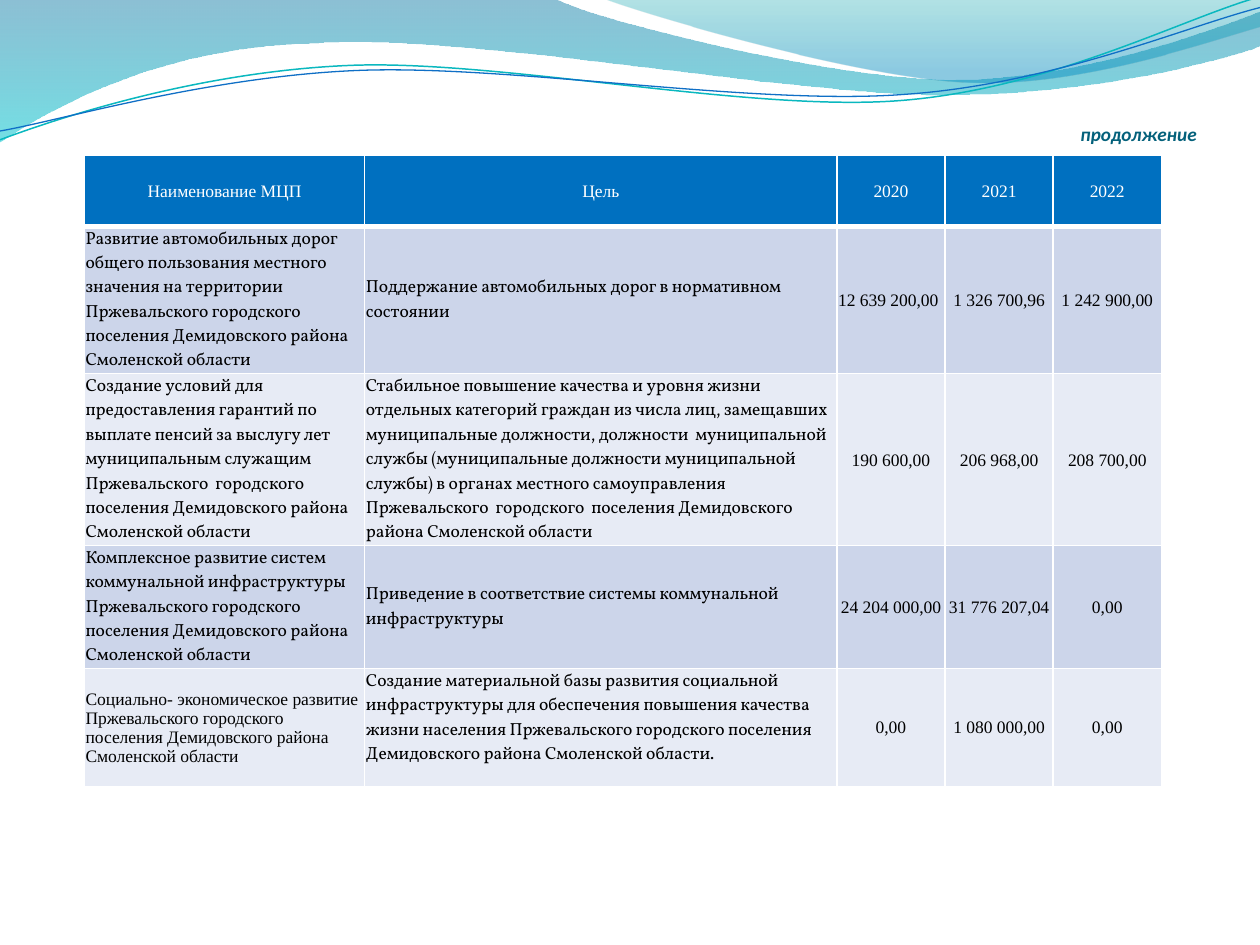
from dataclasses import dataclass
from typing import Optional

from lxml.etree import SubElement
from pptx import Presentation
from pptx.dml.color import RGBColor
from pptx.enum.text import MSO_ANCHOR, PP_ALIGN
from pptx.oxml import parse_xml
from pptx.oxml.ns import nsdecls, qn
from pptx.util import Cm, Pt

SERIF, BOOK = "Times New Roman", "Vollkorn"
HEADER, BAND_DARK, BAND_LIGHT = "0070C0", "CCD5EA", "E7EBF5"
CELL_INSET = Pt(0.75)


@dataclass
class Stop:
    position: float
    color: str
    opacity: int


@dataclass
class Wave:
    """Steps in inches: two numbers are a line, six are a Bezier curve."""
    start: tuple
    steps: list
    stops: tuple = ()
    line: Optional[str] = None
    width: float = 0


@dataclass
class Program:
    name: str
    goal: str
    amounts: tuple
    name_font: str = BOOK
    first_align: PP_ALIGN = PP_ALIGN.CENTER
    goal_bottom: float = 0


WAVES = [
    Wave((0, 0), [(4.4, -0.01), (4.76, 0.17, 6.64, 0.63, 7.58, 0.63),
                  (8.53, 0.63, 9.58, 0.26, 10, 0.09), (10.01, 0.36),
                  (9.83, 0.44, 8.7, 0.76, 7.46, 0.75), (6.22, 0.75, 3.82, 0.28, 2.57, 0.34),
                  (1.29, 0.36, 0.46, 0.83, -0.01, 1.13), (0, 0)],
         (Stop(0, "0074A1", 45), Stop(1, "00C6CF", 55))),
    Wave((4.79, -0.01), [(5.09, 0.11, 6.82, 0.62, 7.69, 0.65),
                         (8.56, 0.69, 9.61, 0.32, 10, 0.21), (10, 0), (4.79, -0.01)],
         (Stop(0, "00A1A9", 30), Stop(0.8, "008BBF", 45))),
    Wave((0, 1.11), [(0.48, 0.93, 1.58, 0.57, 2.77, 0.52), (3.95, 0.47, 5.93, 0.89, 7.13, 0.8),
                     (8.33, 0.71, 9.38, 0.15, 9.98, -0.02)], line="0AB8BF", width=0.85),
    Wave((0, 1.04), [(0.47, 0.96, 1.64, 0.61, 2.83, 0.56), (4.03, 0.51, 5.97, 0.84, 7.17, 0.75),
                     (8.36, 0.67, 9.41, 0.21, 10, 0.06)], line="0F6FC6", width=0.75),
]

HEADINGS = ["Наименование МЦП", "Цель", "2020", "2021", "2022"]
PROGRAMS = [
    Program("Развитие автомобильных дорог общего пользования местного значения на территории "
            "Пржевальского городского поселения Демидовского района Смоленской области",
            "Поддержание автомобильных дорог в нормативном состоянии",
            ("12 639 200,00", "1 326 700,96", "1 242 900,00"), first_align=PP_ALIGN.LEFT),
    Program("Создание условий для  предоставления гарантий по выплате пенсий за выслугу лет "
            "муниципальным служащим Пржевальского  городского  поселения Демидовского района "
            "Смоленской области",
            "Стабильное повышение качества и уровня жизни  отдельных категорий граждан из числа "
            "лиц, замещавших муниципальные должности, должности  муниципальной службы "
            "(муниципальные должности муниципальной службы) в органах местного самоуправления "
            "Пржевальского  городского  поселения Демидовского района Смоленской области",
            ("190 600,00", "206 968,00", "208 700,00")),
    Program("Комплексное развитие систем коммунальной инфраструктуры Пржевальского городского "
            "поселения Демидовского района Смоленской области",
            "Приведение в соответствие системы коммунальной инфраструктуры",
            ("24 204 000,00", "31 776 207,04", "0,00")),
    Program("Социально- экономическое развитие Пржевальского городского поселения "
            "Демидовского района Смоленской области",
            "Создание материальной базы развития социальной\n"
            "инфраструктуры для обеспечения повышения качества жизни населения Пржевальского "
            "городского поселения Демидовского района Смоленской области.",
            ("0,00", "1 080 000,00", "0,00"), name_font=SERIF, goal_bottom=0.38),
]
COLUMN_WIDTHS = [5.65, 9.52, 2.18, 2.18, 2.18]
ROW_HEIGHTS = [1.44, 2.13, 1.3, 1.32, 1.32]


def rgb(color: str) -> RGBColor:
    return RGBColor.from_string(color)


def apply(target, values: dict) -> None:
    for name, value in values.items():
        setattr(target, name, value)


def write_text(frame, text: str, align: PP_ALIGN, color: str, **font) -> None:
    frame.text = text
    for para in frame.paragraphs:
        para.alignment = align
        for span in para.runs:
            apply(span.font, font)
            span.font.color.rgb = rgb(color)


def bend(shape, steps: list) -> None:
    """Join each three line segments that belong to a curve into one Bezier."""
    segments = iter(list(shape.element.iter(qn("a:lnTo"))))
    for step in steps:
        group = [next(segments) for _ in range(len(step) // 2)]
        if len(group) == 3:
            curve = parse_xml(f'<a:cubicBezTo {nsdecls("a")}/>')
            group[0].addprevious(curve)
            for segment in group:
                curve.append(segment[0])
                segment.getparent().remove(segment)


def draw_wave(page, wave: Wave) -> None:
    points = [wave.start] + [step[i:i + 2] for step in wave.steps for i in range(0, len(step), 2)]
    first, *rest = [(Cm(2.54 * x), Cm(2.54 * y)) for x, y in points]
    builder = page.shapes.build_freeform(*first)
    builder.add_line_segments(rest, close=bool(wave.stops))
    shape = builder.convert_to_shape()
    bend(shape, wave.steps)
    shape.shadow.inherit = False
    if wave.line:
        shape.fill.background()
        shape.line.color.rgb = rgb(wave.line)
        shape.line.width = Pt(wave.width)
        return
    shape.line.fill.background()
    shape.fill.gradient()
    shape.fill.gradient_angle = 270
    for target, stop in zip(shape.fill.gradient_stops, wave.stops):
        target.position = stop.position
        target.color.rgb = rgb(stop.color)
    for tag, stop in zip(shape.element.iter(qn("a:srgbClr")), wave.stops):
        SubElement(tag, qn("a:alpha"), val=str(stop.opacity * 1000))


def fill_cell(cell, text: str, fill: str, align: PP_ALIGN, font: str,
              color: str = "000000", bottom: float = 0, edge: int = 1, top_edge: int = 1) -> None:
    apply(cell, {"margin_left": CELL_INSET, "margin_right": CELL_INSET, "margin_top": CELL_INSET,
                 "margin_bottom": Cm(bottom), "vertical_anchor": MSO_ANCHOR.MIDDLE})
    write_text(cell.text_frame, text, align, color, name=font, size=Pt(10))
    cell.fill.solid()
    cell.fill.fore_color.rgb = rgb(fill)
    properties = cell._tc.get_or_add_tcPr()
    for i, (side, points) in enumerate(zip("LRTB", (1, 1, top_edge, edge))):
        properties.insert(i, parse_xml(
            f'<a:ln{side} {nsdecls("a")} w="{Pt(points)}"><a:solidFill>'
            f'<a:srgbClr val="FFFFFF"/></a:solidFill></a:ln{side}>'))


def draw_table(page) -> None:
    table = page.shapes.add_table(len(ROW_HEIGHTS), len(COLUMN_WIDTHS), Cm(1.7), Cm(3.12),
                                  Cm(sum(COLUMN_WIDTHS)), Cm(sum(ROW_HEIGHTS))).table
    for column, width in zip(table.columns, COLUMN_WIDTHS):
        column.width = Cm(width)
    for row, height in zip(table.rows, ROW_HEIGHTS):
        row.height = Cm(height)
    for i, heading in enumerate(HEADINGS):
        fill_cell(table.cell(0, i), heading, HEADER, PP_ALIGN.CENTER, SERIF, "FFFFFF", edge=3)
    for r, program in enumerate(PROGRAMS, 1):
        fill = BAND_DARK if r % 2 else BAND_LIGHT
        top = 3 if r == 1 else 1
        fill_cell(table.cell(r, 0), program.name, fill, PP_ALIGN.LEFT, program.name_font,
                  top_edge=top)
        fill_cell(table.cell(r, 1), program.goal, fill, PP_ALIGN.LEFT, BOOK,
                  bottom=program.goal_bottom, top_edge=top)
        for c, amount in enumerate(program.amounts, 2):
            align = program.first_align if c == 2 else PP_ALIGN.CENTER
            fill_cell(table.cell(r, c), amount, fill, align, SERIF, top_edge=top)


def main() -> None:
    deck = Presentation()
    deck.slide_width, deck.slide_height = Cm(25.4), Cm(19.05)
    page = deck.slides.add_slide(deck.slide_layouts[5])

    # Waves across the top
    for wave in WAVES:
        draw_wave(page, wave)

    # Title, in front of the waves
    title = page.shapes.title
    page.shapes.element.append(title.element)
    apply(title, {"left": Cm(1.27), "top": Cm(1.96), "width": Cm(22.86), "height": Cm(0.97)})
    apply(title.text_frame, {"margin_left": 0, "margin_right": 0, "margin_top": Cm(0.13),
                             "margin_bottom": 0, "vertical_anchor": MSO_ANCHOR.BOTTOM})
    write_text(title.text_frame, "продолжение", PP_ALIGN.RIGHT, "04617B",
               name="Calibri", size=Pt(11), bold=True, italic=True)

    # Programme table
    draw_table(page)
    deck.save("out.pptx")


if __name__ == "__main__":
    main()
